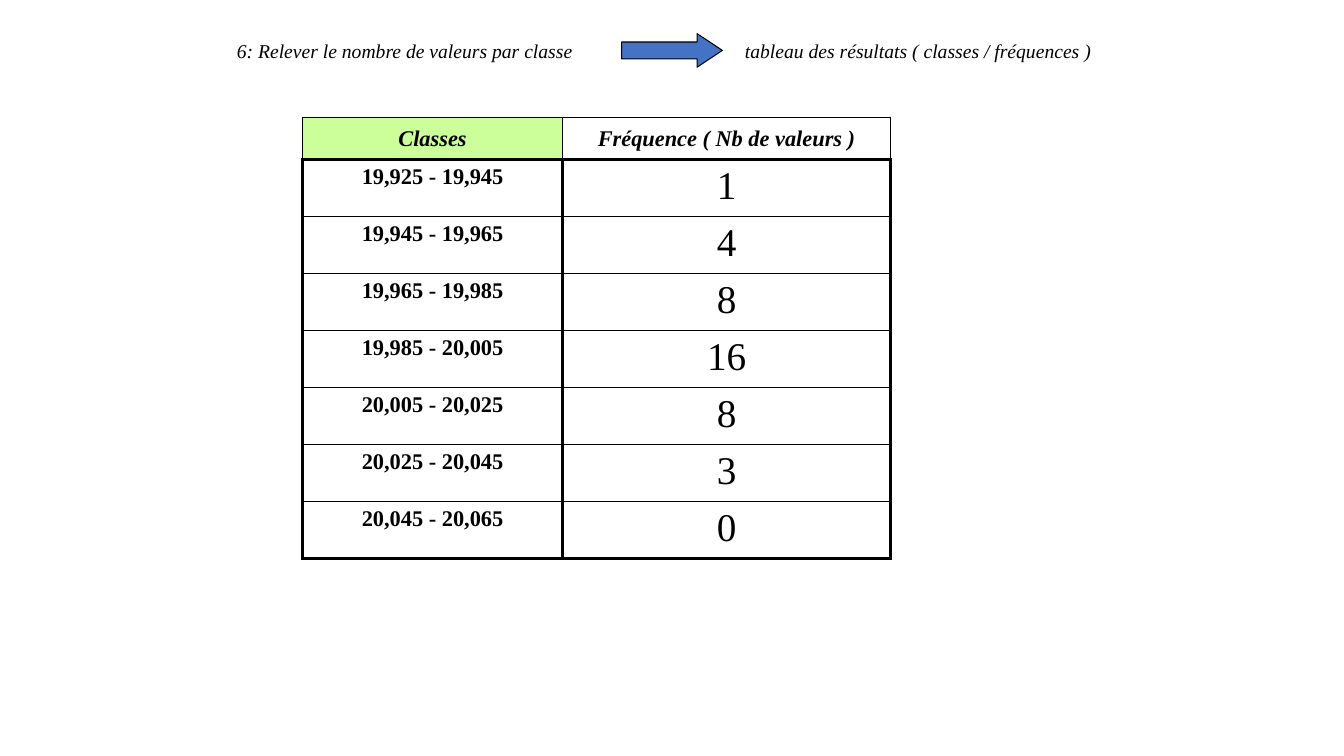
"""Build the slide that counts the values in each class."""
from dataclasses import dataclass

from lxml.etree import SubElement
from pptx import Presentation
from pptx.dml.color import RGBColor
from pptx.enum.shapes import MSO_SHAPE as Preset
from pptx.enum.text import MSO_ANCHOR as Anchor, MSO_AUTO_SIZE as AutoSize, PP_ALIGN as Align
from pptx.oxml.ns import qn
from pptx.shapes.autoshape import Shape
from pptx.slide import Slide
from pptx.table import _Cell as Cell
from pptx.text.text import Font
from pptx.util import Emu, Pt

EMU_PER_PX = 9525


@dataclass(frozen=True)
class Theme:
    """Colours, font, type sizes and line widths."""
    face: str = "Times New Roman"
    ink: str = "000000"
    paper: str = "FFFFFF"
    accent: str = "4472C4"
    highlight: str = "CCFF99"
    step_size: float = 14
    class_size: float = 16
    count_size: float = 28
    arrow_line: float = 0.75
    thin: float = 1
    thick: float = 2.25


@dataclass(frozen=True)
class Box:
    """Position and size in px."""
    left: int
    top: int
    width: int
    height: int

    def emu(self) -> tuple[Emu, Emu, Emu, Emu]:
        """Return the four lengths in EMU."""
        return px(self.left), px(self.top), px(self.width), px(self.height)


@dataclass(frozen=True)
class Column:
    """A column of results drawn over the grid."""
    left: int
    width: int
    heading: str
    heading_fill: str
    values: tuple[str, ...]
    size: float
    bold: bool


THEME = Theme()
HEADING_TOP, HEADING_HEIGHT, VALUES_HEIGHT = 112, 40, 380
VALUES_TOP = HEADING_TOP + HEADING_HEIGHT

BOUNDS = ("19,925", "19,945", "19,965", "19,985", "20,005", "20,025", "20,045", "20,065")
CLASSES = tuple(f"{low} - {high}" for low, high in zip(BOUNDS, BOUNDS[1:]))
COUNTS = ("1", "4", "8", "16", "8", "3", "0")
COLUMNS = (
    Column(288, 248, "Classes", THEME.highlight, CLASSES, THEME.class_size, True),
    Column(536, 312, "Fréquence ( Nb de valeurs )", THEME.paper, COUNTS, THEME.count_size, False),
)


def px(length: int) -> Emu:
    """Turn px into EMU."""
    return Emu(length * EMU_PER_PX)


def color(code: str) -> RGBColor:
    """Turn a hexadecimal code into a colour."""
    return RGBColor.from_string(code)


def style_font(font: Font, size: float, bold: bool = False, italic: bool = False) -> None:
    """Apply the slide's typeface to a font."""
    font.name, font.size = THEME.face, Pt(size)
    font.bold, font.italic = bold, italic
    font.color.rgb = color(THEME.ink)


def write_step(step: Shape, text: str, box: Box) -> None:
    """Place and write one half of the step's heading."""
    step.left, step.top, step.width, step.height = box.emu()
    frame = step.text_frame
    frame.text = text
    frame.word_wrap = True
    frame.auto_size = AutoSize.NONE
    frame.vertical_anchor = Anchor.TOP
    frame.paragraphs[0].alignment = Align.LEFT
    style_font(frame.paragraphs[0].runs[0].font, THEME.step_size, italic=True)


def draw_arrow(slide: Slide, box: Box) -> None:
    """Draw the arrow between the two halves of the heading."""
    arrow = slide.shapes.add_shape(Preset.RIGHT_ARROW, *box.emu())
    arrow.adjustments[1] = 0.75
    arrow.shadow.inherit = False
    arrow.fill.solid()
    arrow.fill.fore_color.rgb = color(THEME.accent)
    arrow.line.color.rgb = color(THEME.ink)
    arrow.line.width = Pt(THEME.arrow_line)


def border_cell(cell: Cell, side: float, top: float, bottom: float) -> None:
    """Give a cell its four borders, with widths in points."""
    properties = cell._tc.get_or_add_tcPr()
    for tag, width in (("a:lnL", side), ("a:lnR", side), ("a:lnT", top), ("a:lnB", bottom)):
        line = SubElement(properties, qn(tag), w=str(Pt(width)))
        SubElement(SubElement(line, qn("a:solidFill")), qn("a:srgbClr"), val=THEME.ink)


def fill_cell(cell: Cell, code: str) -> None:
    """Fill a cell with one colour."""
    cell.fill.solid()
    cell.fill.fore_color.rgb = color(code)


def write_cell(cell: Cell, text: str, size: float, bold: bool, italic: bool = False) -> None:
    """Write centred text in a cell."""
    cell.text = text
    paragraph = cell.text_frame.paragraphs[0]
    paragraph.alignment = Align.CENTER
    style_font(paragraph.runs[0].font, size, bold, italic)


def draw_grid(slide: Slide) -> None:
    """Draw the headings and the empty grid below them."""
    width = sum(column.width for column in COLUMNS)
    box = Box(COLUMNS[0].left, HEADING_TOP, width, HEADING_HEIGHT + VALUES_HEIGHT)
    grid = slide.shapes.add_table(len(CLASSES) + 1, len(COLUMNS), *box.emu()).table
    grid.first_row = grid.horz_banding = False
    for number, row in enumerate(grid.rows):
        row.height = px(VALUES_HEIGHT) // len(CLASSES) if number else px(HEADING_HEIGHT)
    for number, column in enumerate(COLUMNS):
        grid.columns[number].width = px(column.width)
        for row in range(len(grid.rows)):
            cell = grid.cell(row, number)
            border_cell(cell, THEME.thin, THEME.thin, THEME.thin)
            fill_cell(cell, THEME.paper if row else column.heading_fill)
        heading = grid.cell(0, number)
        heading.vertical_anchor = Anchor.MIDDLE
        write_cell(heading, column.heading, THEME.class_size, bold=True, italic=True)


def draw_values(slide: Slide, column: Column) -> None:
    """Draw one framed column of values."""
    box = Box(column.left, VALUES_TOP, column.width, VALUES_HEIGHT)
    values = slide.shapes.add_table(len(column.values), 1, *box.emu()).table
    values.first_row = values.horz_banding = False
    last = len(column.values) - 1
    for row, text in enumerate(column.values):
        cell = values.cell(row, 0)
        top = THEME.thin if row else THEME.thick
        bottom = THEME.thick if row == last else THEME.thin
        border_cell(cell, THEME.thick, top, bottom)
        cell.fill.background()
        write_cell(cell, text, column.size, column.bold)


def main() -> None:
    """Build and save the slide."""
    deck = Presentation()
    deck.slide_width, deck.slide_height = px(1280), px(720)
    slide = deck.slides.add_slide(deck.slide_layouts[5])
    step_box, result_box = Box(216, 32, 384, 33), Box(700, 32, 384, 33)
    write_step(slide.shapes.title, "6: Relever le nombre de valeurs par classe", step_box)
    draw_arrow(slide, Box(592, 32, 96, 32))
    result = slide.shapes.add_textbox(*result_box.emu())
    write_step(result, "tableau des résultats ( classes / fréquences )", result_box)
    draw_grid(slide)
    for column in COLUMNS:
        draw_values(slide, column)
    deck.save("out.pptx")


if __name__ == "__main__":
    main()
